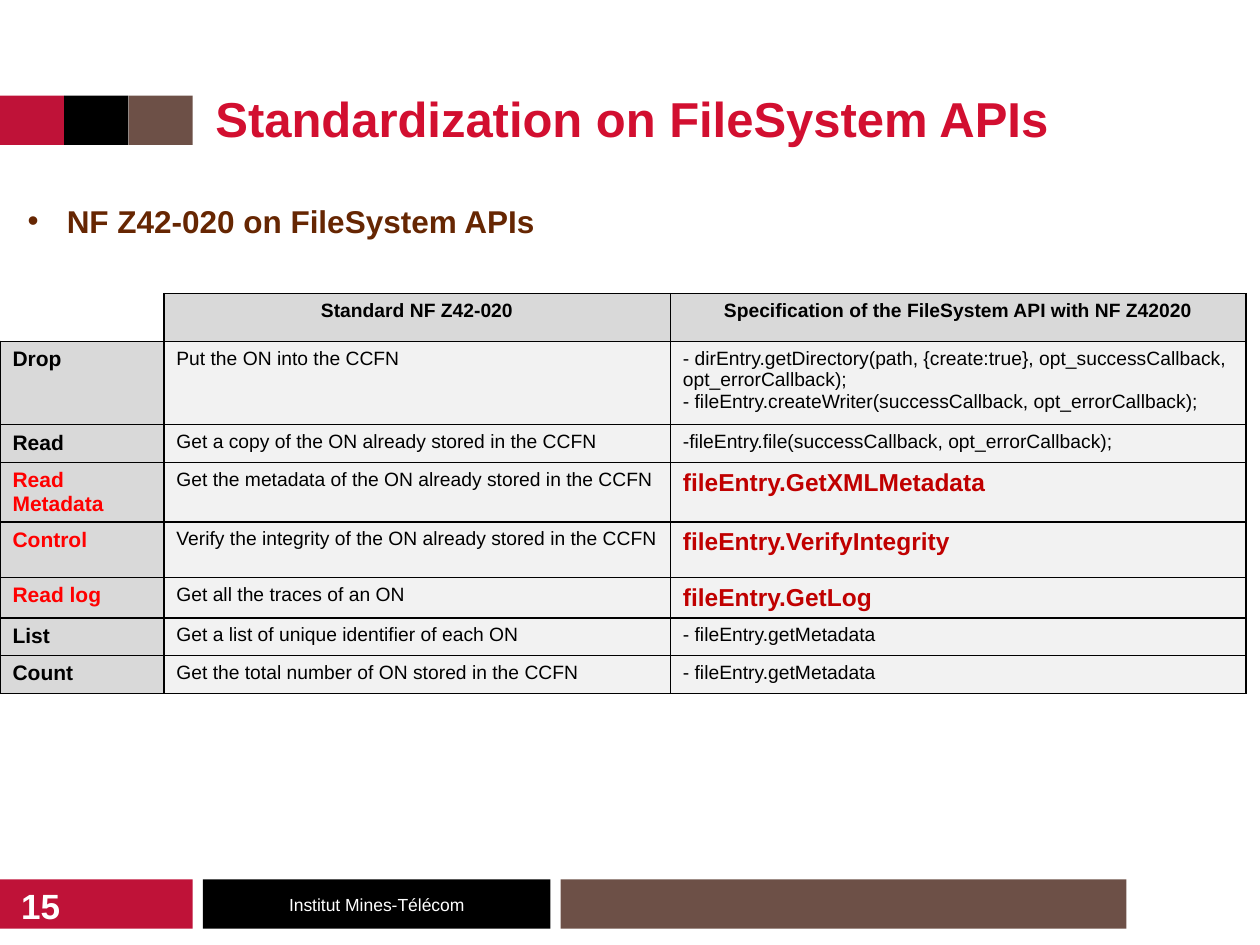
from lxml.etree import SubElement
from pptx import Presentation
from pptx.dml.color import RGBColor
from pptx.enum.shapes import MSO_SHAPE
from pptx.enum.text import MSO_ANCHOR, PP_ALIGN
from pptx.oxml.ns import qn
from pptx.util import Inches, Pt

TITLE = "Standardization on FileSystem APIs"
BULLET = "NF Z42-020 on FileSystem APIs"
FOOTER = "Institut Mines-Télécom"
NUMBER = "15"

RED, BROWN, BLACK, WHITE = "BF1238", "6D5047", "000000", "FFFFFF"
BARS = [
    (0, 6.98, 1.53, RED, ""),
    (4.45, 6.98, 4.49, BROWN, ""),
    (0, 0.76, 0.51, RED, ""),
    (0.51, 0.76, 0.51, BLACK, ""),
    (1.02, 0.76, 0.51, BROWN, ""),
    (1.61, 6.98, 2.76, BLACK, FOOTER),
]
BAR_HEIGHT = 0.39

COLUMNS = [1.3, 4.02, 4.57]
ROW_HEIGHTS = [0.28, 0.66, 0.3, 0.47, 0.44, 0.32, 0.3, 0.3]
HEADINGS = ["", "Standard NF Z42-020", "Specification of the FileSystem API with NF Z42020"]
OPERATIONS = [
    ("Drop", "Put the ON into the CCFN",
     "- dirEntry.getDirectory(path, {create:true}, opt_successCallback, opt_errorCallback);\n"
     "- fileEntry.createWriter(successCallback, opt_errorCallback);"),
    ("Read", "Get a copy of the ON already stored in the CCFN",
     "-fileEntry.file(successCallback, opt_errorCallback);"),
    ("Read Metadata", "Get the metadata of the ON already stored in the CCFN",
     "fileEntry.GetXMLMetadata"),
    ("Control", "Verify the integrity of the ON already stored in the CCFN",
     "fileEntry.VerifyIntegrity"),
    ("Read log", "Get all the traces of an ON", "fileEntry.GetLog"),
    ("List", "Get a list of unique identifier of each ON", "- fileEntry.getMetadata"),
    ("Count", "Get the total number of ON stored in the CCFN", "- fileEntry.getMetadata"),
]
NEW_OPERATIONS = {"Read Metadata", "Control", "Read log"}

PLAIN = {"size": 11, "color": BLACK, "bold": False}
HEADING = {**PLAIN, "bold": True}
LABEL = {**HEADING, "size": 12}
NEW_LABEL = {**LABEL, "color": "FF0000"}
NEW_CALL = {"size": 14, "color": "C00000", "bold": True}


def paint(target, color):
    """Give a fill a solid colour."""
    target.solid()
    target.fore_color.rgb = RGBColor.from_string(color)


def write(frame, text, look, align=PP_ALIGN.LEFT):
    """Fill a text frame, one paragraph per line."""
    for index, line in enumerate(text.split("\n")):
        para = frame.paragraphs[0] if index == 0 else frame.add_paragraph()
        para.alignment = align
        span = para.add_run()
        span.text = line
        font = {"name": "Arial", "size": Pt(look["size"]), "bold": look["bold"]}
        for name, value in font.items():
            setattr(span.font, name, value)
        paint(span.font.fill, look["color"])


def place(shape, left, top, width, height):
    """Set the position and size of a shape in inches."""
    for name, value in zip(("left", "top", "width", "height"), (left, top, width, height)):
        setattr(shape, name, Inches(value))


def outline(cell, sides):
    """Draw black one-point borders on the named sides and none elsewhere."""
    properties = cell._tc.get_or_add_tcPr()
    for side in "LRTB":
        line = SubElement(properties, qn(f"a:ln{side}"), w=str(Pt(1)))
        if side in sides:
            fill = SubElement(line, qn("a:solidFill"))
            SubElement(fill, qn("a:srgbClr"), val=BLACK)
        else:
            SubElement(line, qn("a:noFill"))


def cell_look(row, column):
    """Return the text format and fill of a table cell."""
    if row == 0:
        return HEADING, "D9D9D9" if column else WHITE
    new = OPERATIONS[row - 1][0] in NEW_OPERATIONS
    if column == 0:
        return NEW_LABEL if new else LABEL, "D9D9D9"
    return NEW_CALL if new and column == 2 else PLAIN, "F2F2F2"


def add_bars(page):
    """Add the coloured bars of the template."""
    for left, top, width, color, text in BARS:
        bar = page.shapes.add_shape(
            MSO_SHAPE.RECTANGLE, Inches(left), Inches(top), Inches(width), Inches(BAR_HEIGHT))
        bar.shadow.inherit = False
        paint(bar.fill, color)
        bar.line.fill.background()
        if text:
            bar.text_frame.vertical_anchor = MSO_ANCHOR.MIDDLE
            write(bar.text_frame, text, {**PLAIN, "size": 10, "color": WHITE}, PP_ALIGN.CENTER)


def add_operations(page):
    """Add the table of operations."""
    rows = [HEADINGS, *OPERATIONS]
    table = page.shapes.add_table(
        len(rows), len(COLUMNS), 0, Inches(2.33),
        Inches(sum(COLUMNS)), Inches(sum(ROW_HEIGHTS))).table
    table.first_row = table.horz_banding = False
    for column, width in zip(table.columns, COLUMNS):
        column.width = Inches(width)
    for r, (texts, height) in enumerate(zip(rows, ROW_HEIGHTS)):
        table.rows[r].height = Inches(height)
        for c, text in enumerate(texts):
            cell = table.cell(r, c)
            look, fill = cell_look(r, c)
            outline(cell, "LRTB" if r or c else "RB")
            paint(cell.fill, fill)
            write(cell.text_frame, text, look, PP_ALIGN.LEFT if r else PP_ALIGN.CENTER)


def add_texts(page):
    """Fill the title and body placeholders and add the page number."""
    title, body = page.placeholders
    place(title, 1.61, 0.7, 7.48, 0.53)
    title.text_frame.vertical_anchor = MSO_ANCHOR.MIDDLE
    write(title.text_frame, TITLE, {"size": 28, "color": "D20F30", "bold": True})
    title.text_frame.paragraphs[0].line_spacing = 0.9

    place(body, 0.12, 1.55, 4.34, 0.4)
    body.text_frame.word_wrap = False
    write(body.text_frame, BULLET, {"size": 18, "color": "662602", "bold": True})
    para = body.text_frame.paragraphs[0]
    para.space_before = Pt(0)
    properties = para._p.get_or_add_pPr()
    properties.set("marL", str(Inches(0.31)))
    properties.set("indent", str(-Inches(0.31)))
    SubElement(properties, qn("a:buFont"), typeface="Arial")
    SubElement(properties, qn("a:buChar"), char="•")

    number = page.shapes.add_textbox(Inches(0.07), Inches(6.97), Inches(0.6), Inches(0.44))
    number.text_frame.word_wrap = True
    write(number.text_frame, NUMBER, {"size": 20, "color": WHITE, "bold": True})


def main():
    """Build the slide and save the deck."""
    deck = Presentation()
    deck.slide_width, deck.slide_height = Inches(10), Inches(7.5)
    page = deck.slides.add_slide(deck.slide_layouts[1])
    add_bars(page)
    add_operations(page)
    add_texts(page)
    deck.save("out.pptx")


if __name__ == "__main__":
    main()
